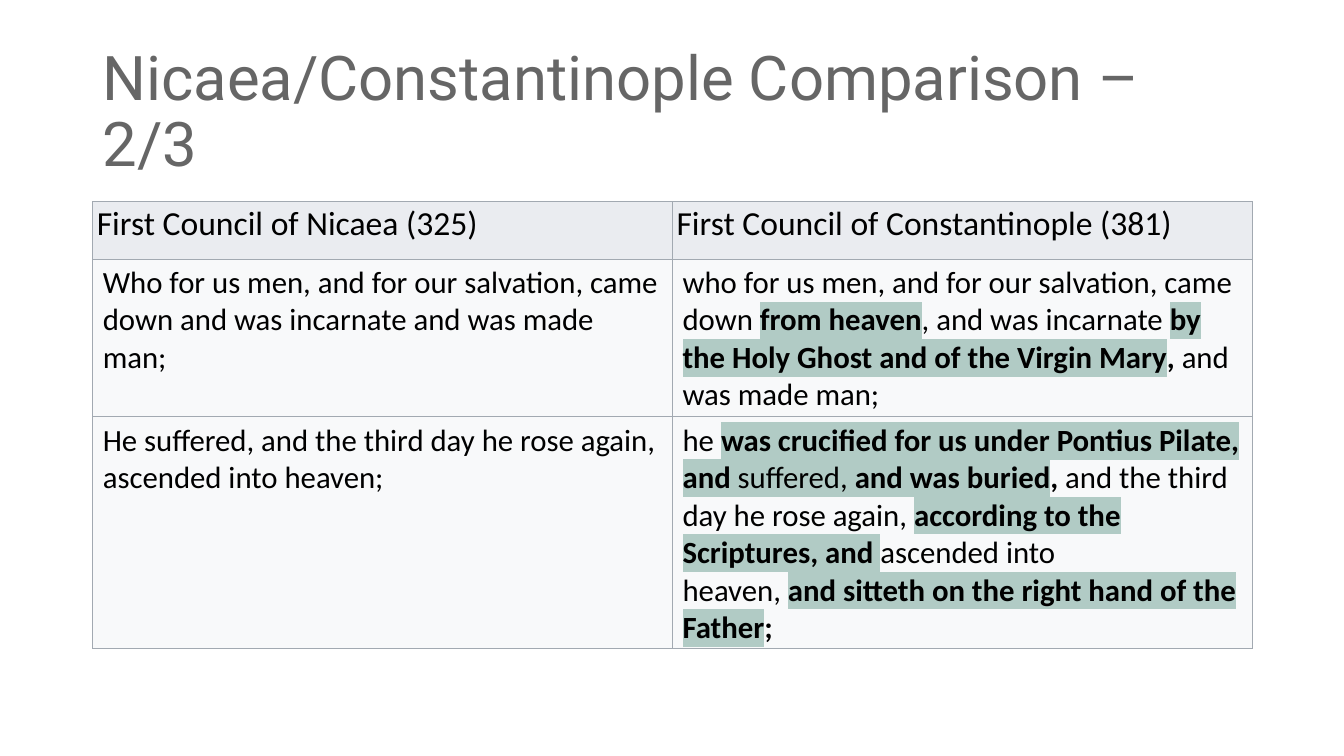
from dataclasses import dataclass

from lxml.etree import SubElement
from pptx import Presentation
from pptx.dml.color import RGBColor
from pptx.enum.text import MSO_ANCHOR
from pptx.oxml import parse_xml
from pptx.oxml.ns import nsdecls, qn
from pptx.util import Inches, Pt

# Run styles: (bold, highlighted)
PLAIN, BOLD, MARK, BOLD_MARK = (False, False), (True, False), (False, True), (True, True)

# "~" stands for a no-break space
TITLE = "Nicaea/Constantinople Comparison – 2/3"
ROWS = [
    [
        [("First Council of Nicaea (325)", PLAIN)],
        [("First Council of Constantinople (381)", PLAIN)],
    ],
    [
        [("Who for us men, and for our~salvation, came down and was~incarnate~and was made man;", PLAIN)],
        [
            ("who for us men, and for our salvation, came down~", PLAIN),
            ("from heaven", BOLD_MARK),
            (", and was incarnate~", PLAIN),
            ("by the Holy Ghost and of the Virgin Mary", BOLD_MARK),
            (",", BOLD),
            ("~and was made man;", PLAIN),
        ],
    ],
    [
        [("He suffered, and the third day~he rose again, ascended into heaven;", PLAIN)],
        [
            ("he~", PLAIN),
            ("was~crucified~for us under~Pontius Pilate, and", BOLD_MARK),
            ("~suffered,~", MARK),
            ("and was~buried", BOLD_MARK),
            (",", BOLD),
            ("~and the third day he rose again,~", PLAIN),
            ("according to the Scriptures, and", BOLD_MARK),
            ("~", MARK),
            ("ascended into heaven,~", PLAIN),
            ("and~sitteth~on the~right hand of the Father", BOLD_MARK),
            (";", BOLD),
        ],
    ],
]


@dataclass(frozen=True)
class Theme:
    title_font: str = "Roboto"
    body_font: str = "Calibri"
    title_size: int = 44
    header_size: int = 24
    body_size: int = 22
    title_color: str = "666666"
    text_color: str = "000000"
    header_fill: str = "EAECF0"
    body_fill: str = "F8F9FA"
    border: str = "A2A9B1"
    highlight: str = "B1CBC5"
    border_width: float = 0.75


THEME = Theme()
WIDTH, HEIGHT = 13.33, 7.5
LEFT, CONTENT_WIDTH = 0.92, 11.5
TITLE_TOP, TITLE_HEIGHT = 0.4, 1.45
TABLE_TOP = 2
ROW_HEIGHTS = [0.57, 1.43, 1.43]


def style_run(r, font, size, color, bold=False):
    r.font.size, r.font.name, r.font.bold = Pt(size), font, bold
    r.font.color.rgb = RGBColor.from_string(color)


def highlight(r):
    """Put the highlight right after the text fill, as the schema orders it."""
    mark = parse_xml(f'<a:highlight {nsdecls("a")}><a:srgbClr val="{THEME.highlight}"/></a:highlight>')
    r.font.fill._xPr.find(qn("a:solidFill")).addnext(mark)


def add_borders(cell):
    tcPr = cell._tc.get_or_add_tcPr()
    for i, side in enumerate(("lnL", "lnR", "lnT", "lnB")):
        ln = SubElement(tcPr, qn(f"a:{side}"), w=str(Pt(THEME.border_width)))
        fill = SubElement(ln, qn("a:solidFill"))
        SubElement(fill, qn("a:srgbClr"), val=THEME.border)
        tcPr.insert(i, ln)


def fill_cell(cell, runs, is_header):
    if is_header:
        cell.margin_left = cell.margin_right = Inches(0.04)
        cell.margin_top = cell.margin_bottom = Inches(0.02)
    cell.fill.solid()
    cell.fill.fore_color.rgb = RGBColor.from_string(
        THEME.header_fill if is_header else THEME.body_fill)
    add_borders(cell)
    size = THEME.header_size if is_header else THEME.body_size
    p = cell.text_frame.paragraphs[0]
    for text, (bold, marked) in runs:
        r = p.add_run()
        r.text = text.replace("~", chr(160))
        style_run(r, THEME.body_font, size, THEME.text_color, bold)
        if marked:
            highlight(r)


def add_title(s):
    sp = s.shapes.add_textbox(Inches(LEFT), Inches(TITLE_TOP), Inches(CONTENT_WIDTH), Inches(TITLE_HEIGHT))
    tf = sp.text_frame
    tf.word_wrap = True
    tf.vertical_anchor = MSO_ANCHOR.MIDDLE
    tf.text = TITLE
    p = tf.paragraphs[0]
    p.line_spacing = 0.9
    style_run(p.runs[0], THEME.title_font, THEME.title_size, THEME.title_color)


def add_comparison(s):
    table = s.shapes.add_table(
        len(ROWS), len(ROWS[0]), Inches(LEFT), Inches(TABLE_TOP),
        Inches(CONTENT_WIDTH), Inches(sum(ROW_HEIGHTS))).table
    for i, (row, height) in enumerate(zip(ROWS, ROW_HEIGHTS)):
        table.rows[i].height = Inches(height)
        for j, runs in enumerate(row):
            fill_cell(table.cell(i, j), runs, is_header=i == 0)


def main():
    prs = Presentation()
    prs.slide_width, prs.slide_height = Inches(WIDTH), Inches(HEIGHT)
    s = prs.slides.add_slide(prs.slide_layouts[6])
    add_title(s)
    add_comparison(s)
    prs.save("out.pptx")


if __name__ == "__main__":
    main()
